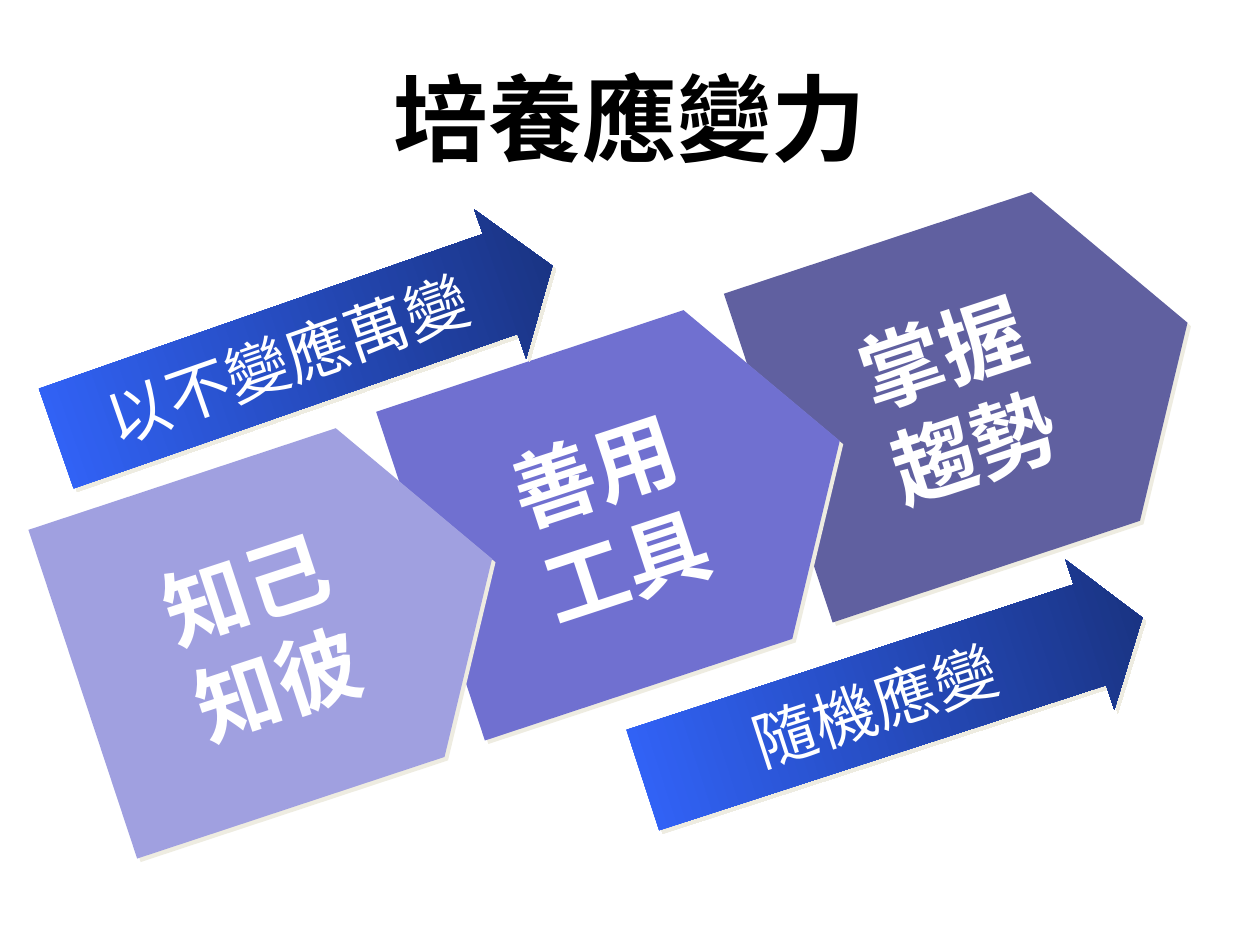
import pptx
import pptx.util
import pptx.dml.color
import pptx.enum.shapes
import pptx.enum.text
import pptx.oxml
import pptx.oxml.ns
from pptx.util import Cm

# Content
TITLE = "培養應變力"
STEPS = [  # lines, colour; from lower left to upper right
    (("知己", "知彼"), "lavender"),
    (("善用", "工具"), "violet"),
    (("掌握", "趨勢"), "plum"),
]
ARROWS = [  # text, left, top, rotation
    ("以不變應萬變", 0.84, 5.51, 340.8),
    ("隨機應變", 12.7, 12.5, 342),
]

# Look
COLOURS = {
    "black": "000000", "white": "FFFFFF", "shadow": "EEECE1",
    "lavender": "A0A0E0", "violet": "7070D0", "plum": "6060A0",
    "blue": "3366FF", "navy": "18307A",
}
FONT = "Arial"
STEP_SIZE, STEP_ROTATION = (8.69, 6.98), 341.7
FIRST_STEP, STEP_SHIFT = (1.45, 9.14), (7.01, -2.38)
ARROW_SIZE = (10.59, 3.18)
SHAPES = pptx.enum.shapes.MSO_SHAPE
ANCHOR = pptx.enum.text.MSO_ANCHOR


def colour(name):
    return pptx.dml.color.RGBColor.from_string(COLOURS[name])


def write(frame, lines, size, ink, bold):
    frame.vertical_anchor = ANCHOR.MIDDLE
    for index, line in enumerate(lines):
        para = frame.paragraphs[0] if index == 0 else frame.add_paragraph()
        para.alignment = pptx.enum.text.PP_ALIGN.CENTER
        span = para.add_run()
        span.text = line
        span.font.name = FONT
        span.font.size = pptx.util.Pt(size)
        span.font.bold = bold
        span.font.color.rgb = colour(ink)


def add_shadow(shape):
    effects = pptx.oxml.parse_xml(
        f'<a:effectLst {pptx.oxml.ns.nsdecls("a")}>'
        '<a:outerShdw dist="35921" dir="2700000" algn="ctr" rotWithShape="0">'
        f'<a:srgbClr val="{COLOURS["shadow"]}"/></a:outerShdw></a:effectLst>')
    shape.shadow.inherit = False
    properties = shape._element.spPr
    properties.replace(properties.find(pptx.oxml.ns.qn("a:effectLst")), effects)


def add_block(shapes, kind, place, size, rotation, adjustments):
    block = shapes.add_shape(kind, *map(Cm, place + size))
    block.rotation = rotation
    for index, value in enumerate(adjustments):
        block.adjustments[index] = value
    block.line.fill.background()
    block.text_frame.word_wrap = False
    add_shadow(block)
    return block


def main():
    deck = pptx.Presentation()
    deck.slide_width, deck.slide_height = Cm(25.4), Cm(19.05)
    page = deck.slides.add_slide(deck.slide_layouts[5])

    # Title
    title = page.shapes.title
    title.left, title.top = Cm(1.27), Cm(0.76)
    title.width, title.height = Cm(22.86), Cm(3.18)
    write(title.text_frame, [TITLE], 54, "black", True)

    # Three overlapping steps, the first one in front
    group = page.shapes.add_group_shape()
    for index, (lines, fill) in reversed(list(enumerate(STEPS))):
        place = tuple(start + index * shift
                      for start, shift in zip(FIRST_STEP, STEP_SHIFT))
        step = add_block(group.shapes, SHAPES.PENTAGON, place, STEP_SIZE,
                         STEP_ROTATION, [0.31])
        step.fill.solid()
        step.fill.fore_color.rgb = colour(fill)
        write(step.text_frame, lines, 48, "white", True)

    # Two gradient arrows
    for text, left, top, rotation in ARROWS:
        arrow = add_block(page.shapes, SHAPES.RIGHT_ARROW, (left, top),
                          ARROW_SIZE, rotation, [0.67, 0.35])
        arrow.fill.gradient()
        arrow.fill.gradient_angle = 0
        for stop, name, position in zip(arrow.fill.gradient_stops,
                                        ("blue", "navy"), (0, 1)):
            stop.color.rgb = colour(name)
            stop.position = position
        write(arrow.text_frame, [text], 36, "white", False)

    deck.save("out.pptx")


if __name__ == "__main__":
    main()
